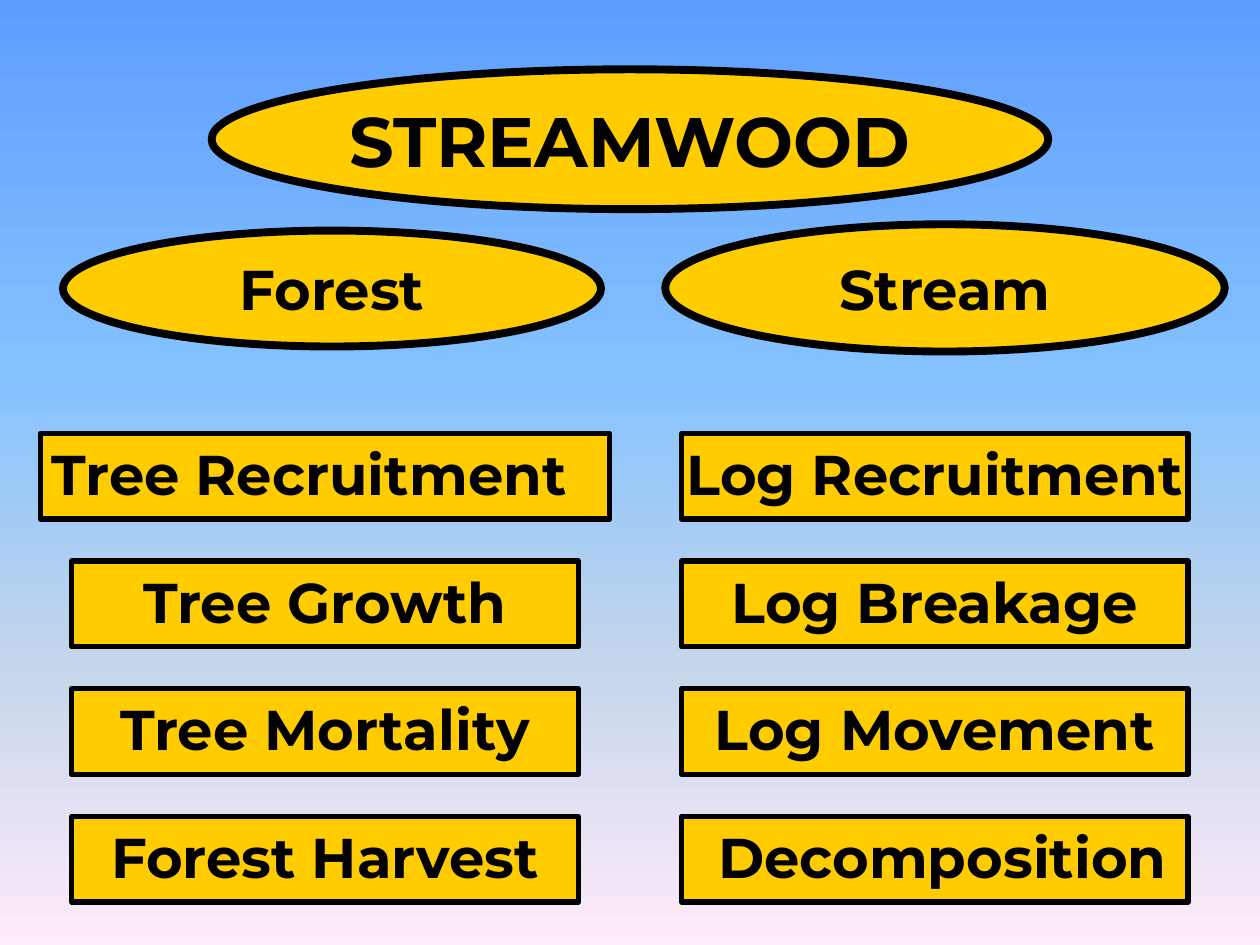
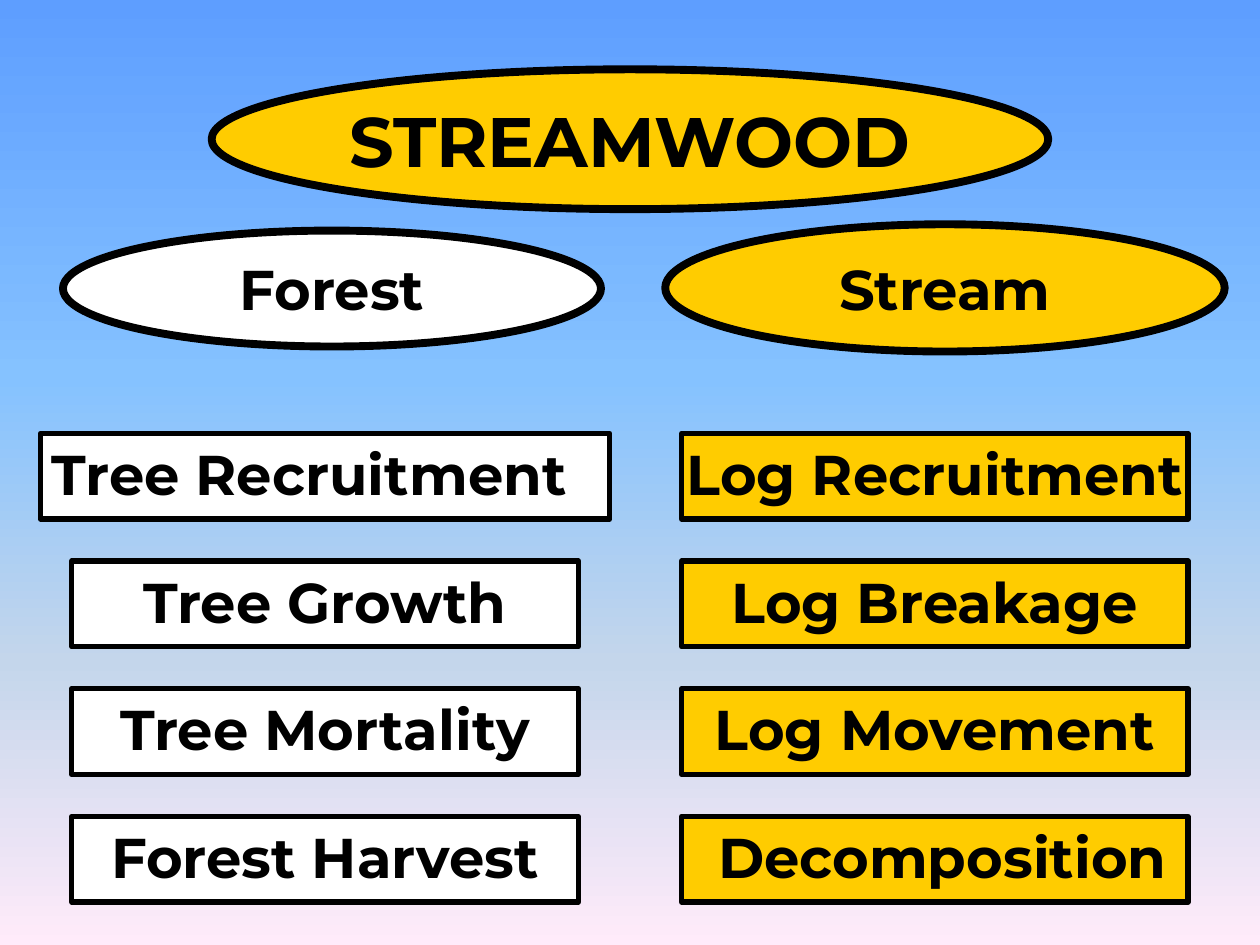
from dataclasses import dataclass

from lxml.etree import SubElement
from pptx import Presentation
from pptx.dml.color import RGBColor
from pptx.enum.shapes import MSO_SHAPE as Shape
from pptx.enum.text import MSO_ANCHOR as Anchor, PP_ALIGN as Align
from pptx.oxml.ns import qn
from pptx.util import Inches, Pt

# Shared style; lengths are units of a grid of 100 columns and 75 rows
COLUMNS, ROWS, UNIT = 100, 75, Inches(0.1)
FONT, BLACK, GOLD, WHITE = "Montserrat", "000000", "FFCC00", "FFFFFF"
SKY = [(0, "5E9EFF"), (40, "85C2FF"), (70, "C4D6EB"), (100, "FFEBFA")]
STEP_HEIGHT = 6.8
INSET = 1


@dataclass
class Box:
    left: float
    top: float
    width: float
    height: float

    def lengths(self):
        return [round(n * UNIT) for n in (self.left, self.top, self.width, self.height)]


@dataclass
class Step:
    label: str
    widen: float = 0  # extra width on each side
    left_inset: float = INSET
    right_inset: float = INSET


@dataclass
class Branch:
    heading: str
    heading_box: Box
    steps_box: Box
    steps: list


TITLE_BOX = Box(16.8, 5.5, 66.4, 11.1)
FOREST = Branch("Forest", Box(5, 18.3, 42.7, 9.2), Box(5.7, 34.4, 40.2, 37.2), [
    Step("Tree Recruitment", widen=2.5, right_inset=3.5),
    Step("Tree Growth"), Step("Tree Mortality"), Step("Forest Harvest")])
STREAM = Branch("Stream", Box(52.8, 17.8, 44.4, 10.1), Box(54.1, 34.4, 40.2, 37.2), [
    Step("Log Recruitment"), Step("Log Breakage"), Step("Log Movement"),
    Step("Decomposition", left_inset=2.2)])


def color(hex_code):
    return RGBColor.from_string(hex_code)


def paint_sky(master):
    fill = master.background.fill
    fill.gradient()
    fill.gradient_angle = 270
    stops = next(master.element.iter(qn("a:gsLst")))
    for stop in list(stops):
        stops.remove(stop)
    for percent, hex_code in SKY:
        stop = SubElement(stops, qn("a:gs"), pos=str(percent * 1000))
        SubElement(stop, qn("a:srgbClr"), val=hex_code)


def write(shape, text, size=32, anchor=Anchor.MIDDLE, left=INSET, right=INSET):
    frame = shape.text_frame
    frame.word_wrap = False
    frame.vertical_anchor = anchor
    frame.margin_left, frame.margin_right = round(left * UNIT), round(right * UNIT)
    para = frame.paragraphs[0]
    para.alignment = Align.CENTER
    span = para.add_run()
    span.text = text
    span.font.name, span.font.size, span.font.bold = FONT, Pt(size), True
    span.font.color.rgb = color(BLACK)


def add_block(page, kind, box, fill, line_width):
    shape = page.shapes.add_shape(kind, *box.lengths())
    shape.shadow.inherit = False
    shape.fill.solid()
    shape.fill.fore_color.rgb = color(fill)
    shape.line.color.rgb = color(BLACK)
    shape.line.width = Pt(line_width)
    return shape


def add_oval(page, box, text, fill=GOLD, size=32):
    write(add_block(page, Shape.OVAL, box, fill, 4.5), text, size=size)


def add_steps(page, box, steps, fill):
    pitch = (box.height - STEP_HEIGHT) / (len(steps) - 1)
    for row, step in enumerate(steps):
        place = Box(box.left - step.widen, box.top + row * pitch,
                    box.width + 2 * step.widen, STEP_HEIGHT)
        block = add_block(page, Shape.RECTANGLE, place, fill, 3)
        write(block, step.label, anchor=Anchor.TOP,
              left=step.left_inset, right=step.right_inset)


def add_branch(page, branch, fill):
    add_oval(page, branch.heading_box, branch.heading, fill)
    add_steps(page, branch.steps_box, branch.steps, fill)


def add_model_page(deck, forest_fill):
    page = deck.slides.add_slide(deck.slide_layouts[6])
    add_oval(page, TITLE_BOX, "STREAMWOOD", size=40)
    add_branch(page, FOREST, forest_fill)
    add_branch(page, STREAM, GOLD)


def main():
    deck = Presentation()
    deck.slide_width, deck.slide_height = COLUMNS * UNIT, ROWS * UNIT
    paint_sky(deck.slide_master)
    # Overview, then the forest branch highlighted
    for forest_fill in (GOLD, WHITE):
        add_model_page(deck, forest_fill)
    deck.save("out.pptx")


if __name__ == "__main__":
    main()
